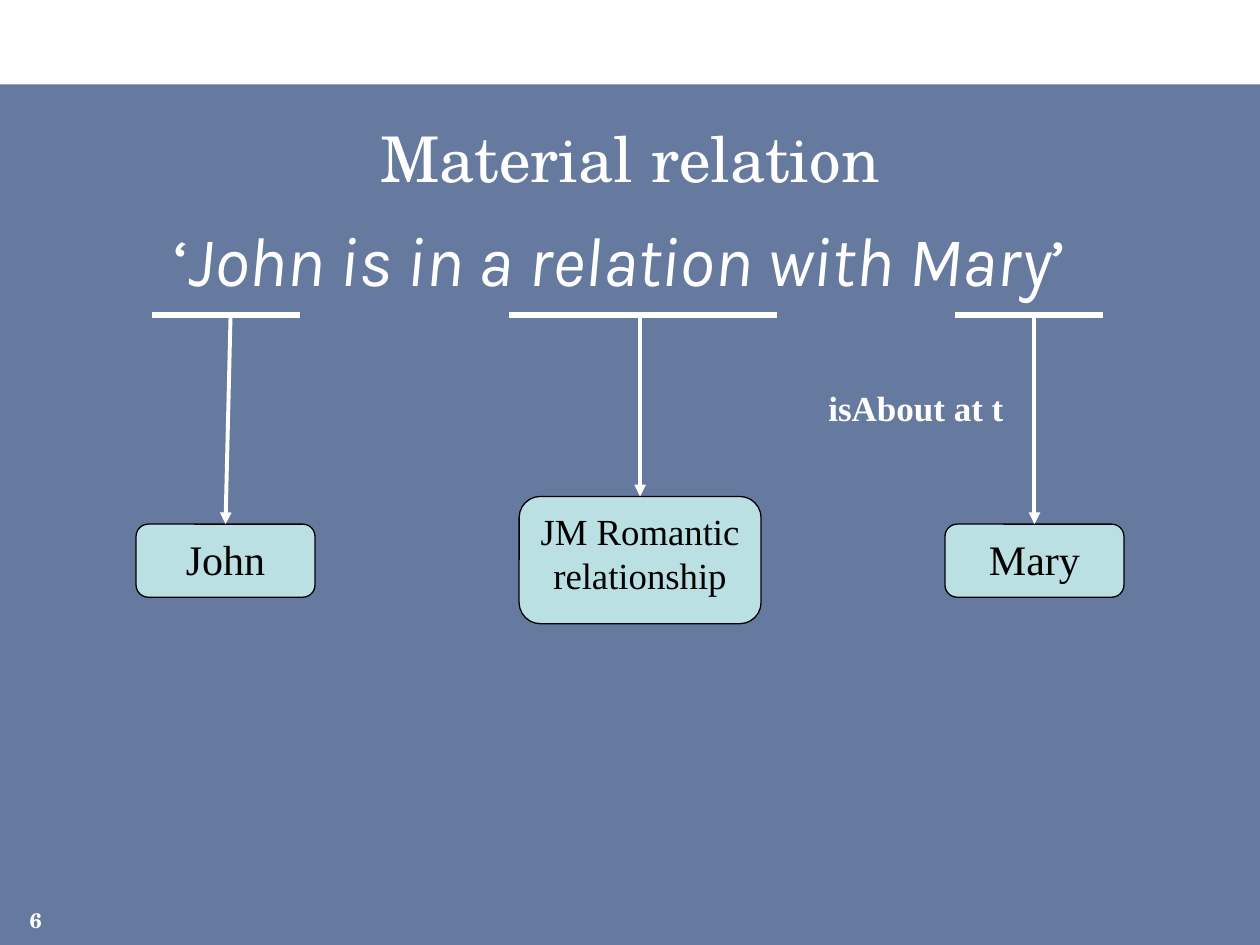
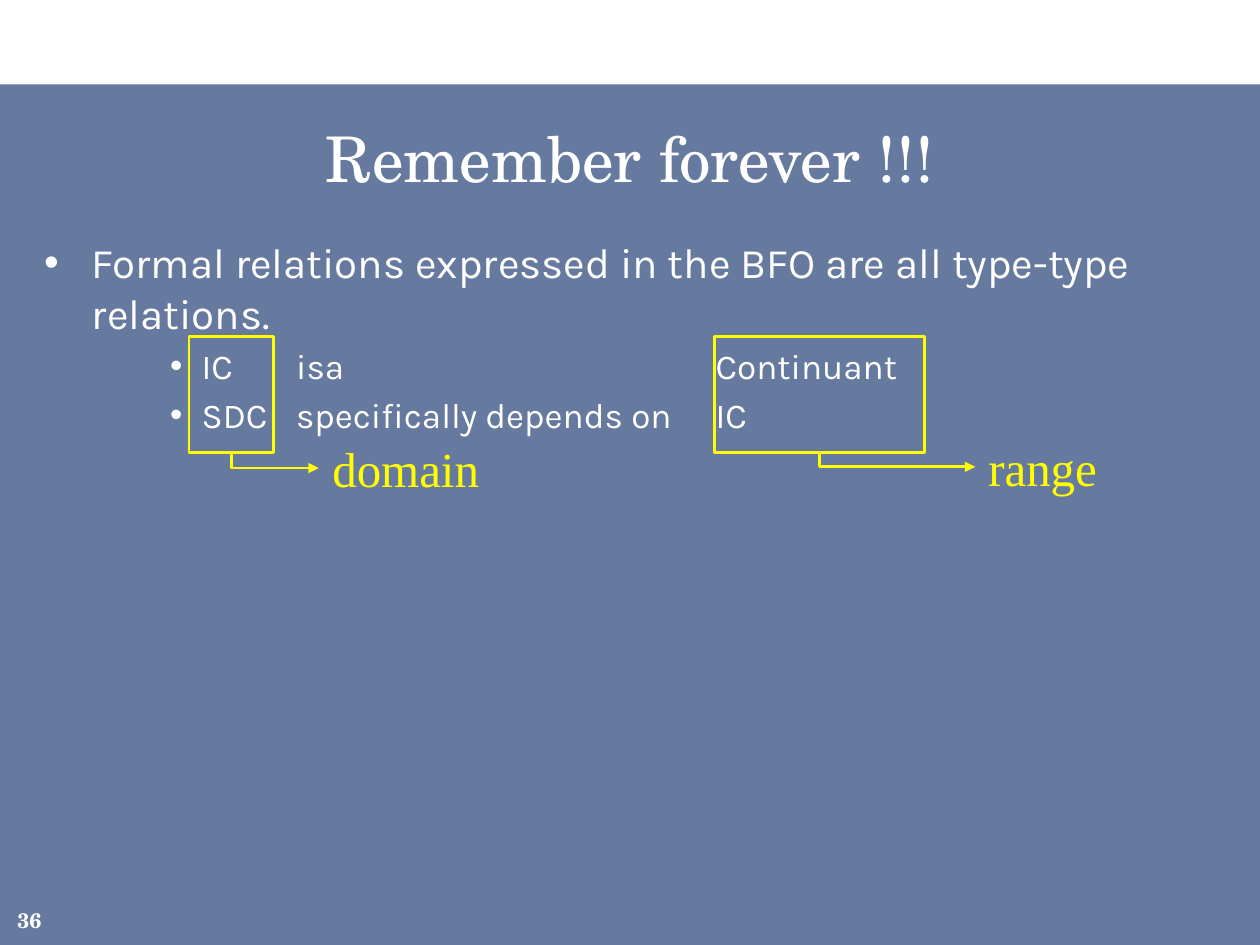
from lxml.etree import SubElement
from pptx import Presentation
from pptx.dml.color import RGBColor
from pptx.enum.shapes import MSO_CONNECTOR, MSO_SHAPE
from pptx.enum.text import MSO_ANCHOR, MSO_AUTO_SIZE, PP_ALIGN
from pptx.oxml.ns import qn
from pptx.util import Inches, Pt

NAVY = RGBColor(0x00, 0x20, 0x60)
WHITE = RGBColor(0xFF, 0xFF, 0xFF)
BLACK = RGBColor(0x00, 0x00, 0x00)
PALE_TEAL = RGBColor(0xBB, 0xE0, 0xE3)
YELLOW = RGBColor(0xFF, 0xFF, 0x00)

TITLE_FONT = "TeX Gyre Schola"
BODY_FONT = "Karla"
DIAGRAM_FONT = "Times New Roman"

UNDERLINE_Y = 2.5
TITLE_BOX = (0.25, 0.83, 9.5, 0.83)
NUMBER_BOX = (0, 7.08, 0.33, 0.32)


def inches(box):
    return [Inches(length) for length in box]


def place(placeholder, box):
    placeholder.left, placeholder.top, placeholder.width, placeholder.height = inches(box)
    placeholder.text_frame.auto_size = MSO_AUTO_SIZE.NONE


def style(paragraph, size, font, color, align=PP_ALIGN.CENTER, bold=False):
    paragraph.alignment = align
    for run in paragraph.runs:
        run.font.size = Pt(size)
        run.font.name = font
        run.font.color.rgb = color
        run.font.bold = bold


def indent(paragraph, margin, hanging, bullet=None, tabs=()):
    properties = paragraph._p.get_or_add_pPr()
    properties.set("marL", str(Inches(margin)))
    properties.set("indent", str(-Inches(hanging)))
    if bullet:
        bullet_color = SubElement(properties, qn("a:buClr"))
        SubElement(bullet_color, qn("a:srgbClr"), val=str(WHITE))
        SubElement(properties, qn("a:buChar"), char=bullet)
    else:
        SubElement(properties, qn("a:buNone"))
    if tabs:
        stops = SubElement(properties, qn("a:tabLst"))
        for stop in tabs:
            SubElement(stops, qn("a:tab"), pos=str(Inches(stop)), algn="l")


def add_label(slide, box, text, size, font, color, align=PP_ALIGN.CENTER, bold=False):
    label = slide.shapes.add_textbox(*inches(box))
    label.text_frame.text = text
    style(label.text_frame.paragraphs[0], size, font, color, align, bold)
    return label.text_frame


def add_outline(slide, preset, box, line_color, line_width):
    outline = slide.shapes.add_shape(preset, *inches(box))
    outline.shadow.inherit = False
    outline.line.color.rgb = line_color
    outline.line.width = Pt(line_width)
    return outline


def add_line(slide, start, end, color, width, arrow=False, kind=MSO_CONNECTOR.STRAIGHT):
    line = slide.shapes.add_connector(kind, *inches(start + end))
    line.line.color.rgb = color
    line.line.width = Pt(width)
    if arrow:
        SubElement(line.line._get_or_add_ln(), qn("a:tailEnd"), type="triangle")
    SubElement(line.element.spPr, qn("a:effectLst"))
    return line


def add_band(prs, slide):
    band = slide.shapes.add_shape(MSO_SHAPE.RECTANGLE, *inches((0, 0.67, 10, 6.83)))
    band.shadow.inherit = False
    band.line.fill.background()
    band.fill.solid()
    band.fill.fore_color.rgb = NAVY
    tint = band.element.spPr.find(qn("a:solidFill")).find(qn("a:srgbClr"))
    SubElement(tint, qn("a:alpha"), val="60000")
    prs.slide_master.shapes.element.insert(2, band.element)


def add_titled_slide(prs, title, number):
    slide = prs.slides.add_slide(prs.slide_layouts[1])
    place(slide.shapes.title, TITLE_BOX)
    slide.shapes.title.text_frame.text = title
    style(slide.shapes.title.text_frame.paragraphs[0], 36, TITLE_FONT, WHITE)
    number_frame = add_label(slide, NUMBER_BOX, number, 12, TITLE_FONT, WHITE,
                             PP_ALIGN.RIGHT, bold=True)
    number_frame.margin_left = number_frame.margin_right = 0
    number_frame.margin_top = number_frame.margin_bottom = 0
    number_frame.vertical_anchor = MSO_ANCHOR.BOTTOM
    number_frame.word_wrap = True
    return slide


def add_referent(slide, box, name, size, underline, arrow_x):
    referent = add_outline(slide, MSO_SHAPE.ROUNDED_RECTANGLE, box, BLACK, 0.75)
    referent.fill.solid()
    referent.fill.fore_color.rgb = PALE_TEAL
    referent.text_frame.text = name
    referent.text_frame.word_wrap = True
    referent.text_frame.vertical_anchor = MSO_ANCHOR.TOP
    style(referent.text_frame.paragraphs[0], size, DIAGRAM_FONT, BLACK)
    left, right = underline
    add_line(slide, (left, UNDERLINE_Y), (right, UNDERLINE_Y), WHITE, 3)
    x, y, width, _ = box
    arrow = add_line(slide, (arrow_x, UNDERLINE_Y), (x + width / 2, y), WHITE, 2.25, arrow=True)
    arrow.end_connect(referent, 0)


def add_role(slide, box, name, label_box):
    add_outline(slide, MSO_SHAPE.RECTANGLE, box, YELLOW, 1.5).fill.background()
    add_label(slide, label_box, name, 28, DIAGRAM_FONT, YELLOW).word_wrap = False
    x, y, width, height = box
    label_x, label_y, _, label_height = label_box
    elbow = add_line(slide, (x + width / 2, y + height), (label_x, label_y + label_height / 2),
                     YELLOW, 1.5, arrow=True, kind=MSO_CONNECTOR.ELBOW)
    guides = elbow.element.spPr.find(qn("a:prstGeom")).get_or_add_avLst()
    SubElement(guides, qn("a:gd"), name="adj1", fmla="val 0")


def build_material_relation(slide):
    body = slide.placeholders[1]
    place(body, (0.17, 1.67, 9.5, 1.33))
    sentence = body.text_frame.paragraphs[0]
    for part in ("‘", "John is in a relation with Mary", "’"):
        sentence.add_run().text = part
    indent(sentence, 0, 0)
    sentence.space_before = Pt(0)
    style(sentence, 40, BODY_FONT, WHITE)
    sentence.runs[1].font.italic = True

    for referent in (
        ((1.08, 4.16, 1.42, 0.58), "John", 24, (1.21, 2.38), 1.83),
        ((7.5, 4.16, 1.42, 0.58), "Mary", 24, (7.58, 8.75), 8.21),
        ((4.12, 3.94, 1.92, 1.01), "JM Romantic relationship", 21, (4.04, 6.17), 5.08),
    ):
        add_referent(slide, *referent)
    add_label(slide, (6.47, 3.02, 1.6, 0.44), "isAbout at t", 20, DIAGRAM_FONT, WHITE,
              bold=True).word_wrap = False


def build_remember_forever(slide):
    body = slide.placeholders[1]
    place(body, (0.25, 1.83, 9.5, 5.42))
    frame = body.text_frame
    frame.text = "\n".join((
        "Formal relations expressed in the BFO are all type-type relations.",
        "IC\tisa\tContinuant",
        "SDC\tspecifically depends on\tIC",
    ))
    statement, *examples = frame.paragraphs
    indent(statement, 0.38, 0.38, "•")
    statement.space_before = Pt(0)
    style(statement, 24, BODY_FONT, WHITE, PP_ALIGN.LEFT)
    for example in examples:
        example.level = 2
        indent(example, 1.25, 0.25, "•", tabs=(2, 5.33))
        example.space_before = Pt(4)
        style(example, 20, BODY_FONT, WHITE, PP_ALIGN.LEFT)

    add_role(slide, (1.5, 2.67, 0.67, 0.92), "domain", (2.53, 3.43, 1.38, 0.57))
    add_role(slide, (5.67, 2.67, 1.67, 0.92), "range", (7.74, 3.42, 1.07, 0.57))


def main():
    prs = Presentation()
    prs.slide_width, prs.slide_height = Inches(10), Inches(7.5)
    material_relation = add_titled_slide(prs, "Material relation", "6")
    add_band(prs, material_relation)
    build_material_relation(material_relation)
    build_remember_forever(add_titled_slide(prs, "Remember forever !!!", "36"))
    prs.save("out.pptx")


if __name__ == "__main__":
    main()
